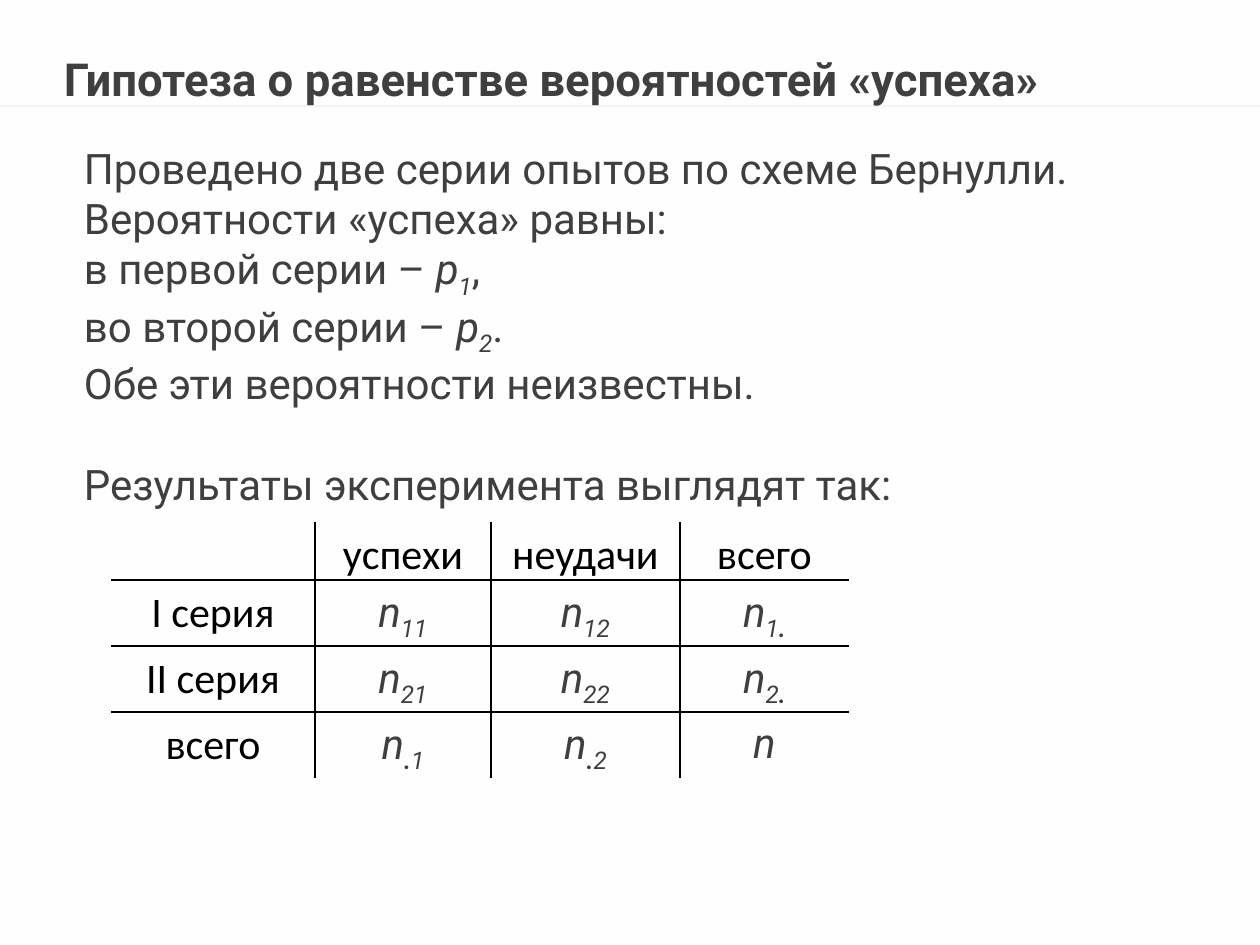
from dataclasses import dataclass

from lxml.etree import SubElement
from pptx import Presentation
from pptx.dml.color import RGBColor
from pptx.enum.shapes import MSO_CONNECTOR, MSO_SHAPE
from pptx.enum.text import MSO_ANCHOR, PP_ALIGN
from pptx.oxml.ns import qn
from pptx.util import Emu, Pt


@dataclass(frozen=True)
class Theme:
    background: str = "FEFEFE"
    band: str = "FFFFFF"
    band_rule: str = "7F7F7F"
    text: str = "3F3F3F"
    grid: str = "000000"
    text_font: str = "Roboto"
    label_font: str = "Calibri"
    title_size: int = 26
    body_size: int = 24


THEME = Theme()
SLIDE_SIZE = (1260, 945)
BAND_BOTTOM = 106

# Each run is (text, marks): b bold, i italic, s subscript; BREAK is a line break
BREAK = ("\n", "")
TITLE = [("Гипотеза о равенстве вероятностей «успеха»", "b")]
BODY = [
    [("Проведено две серии опытов по схеме Бернулли.", "")],
    [("Вероятности «успеха» равны:", ""), BREAK,
     ("в первой серии – ", ""), ("p", "i"), ("1", "is"), (",", "")],
    [("во второй серии – ", ""), ("p", "i"), ("2", "is"), (".", "")],
    [("Обе эти вероятности неизвестны.", "")],
    [("Результаты эксперимента выглядят так:", "")],
]
RESULTS_GAP = 29

COLUMN_LABELS = ["", "успехи", "неудачи", "всего"]
ROW_LABELS = ["I серия", "II серия", "всего"]
COUNT_INDEXES = [["11", "12", "1."], ["21", "22", "2."], [".1", ".2", ""]]
COLUMN_WIDTHS = [204, 176, 189, 169]
ROW_HEIGHTS = [58, 64, 64, 64]


def px(length):
    return Emu(round(length * 914400 / 126))


def rgb(color):
    return RGBColor.from_string(color)


def write(paragraph, runs, size=THEME.body_size, font=THEME.text_font, color=THEME.text):
    for text, marks in runs:
        if text == "\n":
            paragraph.add_line_break()
            continue
        run = paragraph.add_run()
        run.text = text
        run.font.size, run.font.name = Pt(size), font
        run.font.color.rgb = rgb(color)
        run.font.bold, run.font.italic = "b" in marks, "i" in marks
        if "s" in marks:
            run.font._element.set("baseline", "-25000")


def set_opacity(color_format_owner, percent):
    color = next(color_format_owner.iter(qn("a:srgbClr")))
    SubElement(color, qn("a:alpha"), val=str(percent * 1000))


def add_frame(slide, left, top, width, height, anchor):
    box = slide.shapes.add_textbox(px(left), px(top), px(width), px(height))
    frame = box.text_frame
    frame.word_wrap = True
    frame.vertical_anchor = anchor
    frame.margin_left = frame.margin_right = frame.margin_top = frame.margin_bottom = 0
    return frame


def add_header(slide):
    band = slide.shapes.add_shape(MSO_SHAPE.RECTANGLE, 0, 0, px(SLIDE_SIZE[0]), px(BAND_BOTTOM))
    band.shadow.inherit = False
    band.fill.solid()
    band.fill.fore_color.rgb = rgb(THEME.band)
    band.line.fill.background()
    set_opacity(band._element.spPr, 50)

    rule = slide.shapes.add_connector(
        MSO_CONNECTOR.STRAIGHT, 0, px(BAND_BOTTOM), px(SLIDE_SIZE[0]), px(BAND_BOTTOM))
    rule.line.color.rgb = rgb(THEME.band_rule)
    rule.line.width = Pt(0.75)
    set_opacity(rule._element.spPr, 10)
    SubElement(rule._element.spPr, qn("a:effectLst"))

    title = add_frame(slide, 64, 30, 1111, 106, MSO_ANCHOR.MIDDLE).paragraphs[0]
    title.line_spacing = 0.8
    write(title, TITLE, THEME.title_size)


def add_body(slide):
    frame = add_frame(slide, 84, 142, 1121, 370, MSO_ANCHOR.TOP)
    for number, runs in enumerate(BODY):
        paragraph = frame.add_paragraph() if number else frame.paragraphs[0]
        write(paragraph, runs)
    paragraph.space_before = Pt(RESULTS_GAP)


def set_borders(cell, visible_sides):
    properties = cell._tc.get_or_add_tcPr()
    for side in "LRTB":
        line = SubElement(properties, qn(f"a:ln{side}"), w=str(Pt(1)))
        if side in visible_sides:
            fill = SubElement(line, qn("a:solidFill"))
            SubElement(fill, qn("a:srgbClr"), val=THEME.grid)
        else:
            SubElement(line, qn("a:noFill"))


def count_runs(index):
    """The symbol n with its index; the dot of a marginal sum is bold."""
    return [("n", "i")] + [(mark, "isb" if mark == "." else "is") for mark in index]


def add_counts_table(slide):
    rows, columns = len(ROW_HEIGHTS), len(COLUMN_WIDTHS)
    table = slide.shapes.add_table(
        rows, columns, px(111), px(522), px(sum(COLUMN_WIDTHS)), px(sum(ROW_HEIGHTS))).table
    table.first_row = table.horz_banding = False
    for column, width in zip(table.columns, COLUMN_WIDTHS):
        column.width = px(width)
    for row, height in zip(table.rows, ROW_HEIGHTS):
        row.height = px(height)

    for r in range(rows):
        for c in range(columns):
            cell = table.cell(r, c)
            inner = {"L": c > 0, "R": c < columns - 1, "T": r > 0, "B": r < rows - 1}
            set_borders(cell, [side for side, shown in inner.items() if shown])
            cell.fill.background()
            cell.margin_left = cell.margin_right = px(9)
            cell.margin_top = cell.margin_bottom = 0
            paragraph = cell.text_frame.paragraphs[0]
            paragraph.alignment = PP_ALIGN.CENTER
            paragraph.line_spacing = 1.15
            if r and c:
                write(paragraph, count_runs(COUNT_INDEXES[r - 1][c - 1]))
            elif r or c:
                label = ROW_LABELS[r - 1] if r else COLUMN_LABELS[c]
                write(paragraph, [(label, "")], font=THEME.label_font, color=THEME.grid)


def main():
    deck = Presentation()
    deck.slide_width, deck.slide_height = map(px, SLIDE_SIZE)
    slide = deck.slides.add_slide(deck.slide_layouts[6])
    slide.background.fill.solid()
    slide.background.fill.fore_color.rgb = rgb(THEME.background)
    add_header(slide)
    add_body(slide)
    add_counts_table(slide)
    deck.save("out.pptx")


if __name__ == "__main__":
    main()
